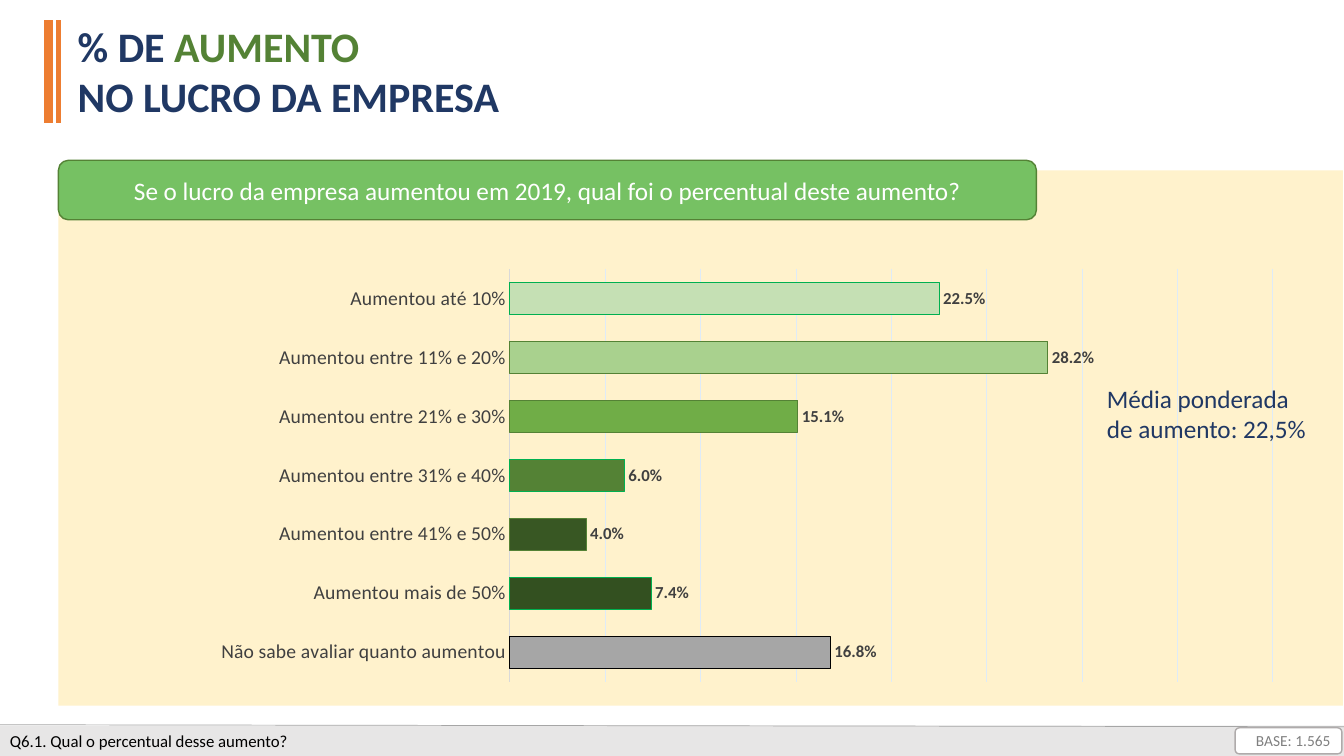
"""Builds the slide on the percentage increase in company profit."""
from dataclasses import dataclass

import lxml.etree as etree
import pptx
import pptx.chart.data
import pptx.dml.color
import pptx.enum.chart
import pptx.enum.shapes
import pptx.enum.text
import pptx.oxml.ns
import pptx.util

Inches = pptx.util.Inches
Pt = pptx.util.Pt
qn = pptx.oxml.ns.qn
SHAPE = pptx.enum.shapes.MSO_SHAPE
ALIGN = pptx.enum.text.PP_ALIGN
ANCHOR = pptx.enum.text.MSO_ANCHOR


@dataclass(frozen=True)
class Theme:
    font: str = "Calibri"
    navy: str = "203864"
    green: str = "548235"
    banner: str = "76C163"
    orange: str = "ED7D31"
    panel: str = "FFF2CC"
    footer: str = "E7E6E6"
    footer_rule: str = "A6A6A6"
    base_border: str = "AFABAB"
    base_text: str = "808080"
    chart_text: str = "404040"
    axis: str = "D9D9D9"
    grid: str = "DEEBF7"
    bar: str = "BDD7EE"
    bright: str = "00B050"
    white: str = "FFFFFF"
    black: str = "000000"
    title_size: int = 30
    body_size: int = 18
    category_size: int = 14
    small_size: int = 12
    base_size: int = 11
    chart_size: int = 10


T = Theme()

ANSWERS = [
    ("Aumentou até 10%", 0.225, "C5E0B4", T.bright),
    ("Aumentou entre 11% e 20%", 0.282, "A9D18E", T.green),
    ("Aumentou entre 21% e 30%", 0.151, "70AD47", T.green),
    ("Aumentou entre 31% e 40%", 0.06, "548235", T.bright),
    ("Aumentou entre 41% e 50%", 0.04, "385723", T.green),
    ("Aumentou mais de 50%", 0.074, "335020", T.bright),
    ("Não sabe avaliar quanto aumentou", 0.168, "A6A6A6", T.black),
]


def rgb(color):
    """Return a colour object for a hex string."""
    return pptx.dml.color.RGBColor.from_string(color)


def set_font(font, size, color, bold=False):
    """Apply the theme typeface with a size, colour and weight."""
    font.name = T.font
    font.size = Pt(size)
    font.bold = bold
    font.color.rgb = rgb(color)


def set_line(line, color, width):
    """Give an outline its colour and width in points."""
    line.color.rgb = rgb(color)
    line.width = Pt(width)


def place(sp, box):
    """Move and size a shape to a box in inches."""
    sp.left, sp.top, sp.width, sp.height = map(Inches, box)


def write(sp, text, size, color, align=ALIGN.LEFT):
    """Fill a shape with wrapped text in one style."""
    tf = sp.text_frame
    tf.word_wrap = True
    tf.text = text
    for p in tf.paragraphs:
        p.alignment = align
        for r in p.runs:
            set_font(r.font, size, color)


def add_box(s, kind, box, fill, border=None):
    """Add a filled shape with an optional border."""
    sp = s.shapes.add_shape(kind, *map(Inches, box))
    sp.shadow.inherit = False
    sp.fill.solid()
    sp.fill.fore_color.rgb = rgb(fill)
    if border:
        set_line(sp.line, border, 1)
    else:
        sp.line.fill.background()
    return sp


def add_rule(s, start, end, color, width):
    """Add a straight line without a shadow."""
    line = s.shapes.add_connector(
        pptx.enum.shapes.MSO_CONNECTOR.STRAIGHT, *map(Inches, start + end))
    set_line(line.line, color, width)
    etree.SubElement(line.element.spPr, qn("a:effectLst"))


def add_title(s, box, lines):
    """Write lines of coloured runs in the title placeholder."""
    title = s.shapes.title
    place(title, box)
    tf = title.text_frame
    tf.word_wrap = True
    tf.auto_size = pptx.enum.text.MSO_AUTO_SIZE.NONE
    tf.vertical_anchor = ANCHOR.TOP
    for i, runs in enumerate(lines):
        p = tf.add_paragraph() if i else tf.paragraphs[0]
        p.alignment = ALIGN.LEFT
        p.line_spacing = 1.0
        p.space_before = Pt(0)
        for text, color in runs:
            r = p.add_run()
            r.text = text
            set_font(r.font, T.title_size, color, bold=True)


def set_plot_area(chart, x, y, w, h):
    """Fix the inner plot area as fractions of the chart."""
    area = chart.element.find(".//" + qn("c:plotArea"))
    for old in area.findall(qn("c:layout")):
        area.remove(old)
    layout = etree.Element(qn("c:layout"))
    manual = etree.SubElement(layout, qn("c:manualLayout"))
    settings = [("layoutTarget", "inner"), ("xMode", "edge"), ("yMode", "edge"),
                ("x", x), ("y", y), ("w", w), ("h", h)]
    for tag, val in settings:
        etree.SubElement(manual, qn("c:" + tag)).set("val", str(val))
    area.insert(0, layout)


def style_axes(chart):
    """Show categories from the top and leave only the value gridlines."""
    cat = chart.category_axis
    cat.reverse_order = True
    cat.major_tick_mark = pptx.enum.chart.XL_TICK_MARK.NONE
    set_font(cat.tick_labels.font, T.category_size, T.chart_text)
    set_line(cat.format.line, T.axis, 0.75)
    val = chart.value_axis
    val.visible = False
    val.minimum_scale, val.maximum_scale, val.major_unit = 0, 0.4, 0.05
    val.has_major_gridlines = True
    set_line(val.major_gridlines.format.line, T.grid, 0.75)


def add_bars(s, box, answers):
    """Add the bar chart with one colour per answer."""
    data = pptx.chart.data.CategoryChartData(number_format="0.0%")
    data.categories = [answer[0] for answer in answers]
    data.add_series("Series 1", [answer[1] for answer in answers])
    chart = s.shapes.add_chart(pptx.enum.chart.XL_CHART_TYPE.BAR_CLUSTERED,
                               *map(Inches, box), data).chart
    chart.has_legend = False
    chart.has_title = False
    set_font(chart.font, T.chart_size, T.black)
    set_plot_area(chart, 0.353, 0.05, 0.647, 0.9)
    style_axes(chart)
    plot = chart.plots[0]
    plot.gap_width = 84
    plot.vary_by_categories = False
    series = plot.series[0]
    series.format.fill.solid()
    series.format.fill.fore_color.rgb = rgb(T.bar)
    for i, (_, _, fill, border) in enumerate(answers):
        fmt = series.points[i].format
        fmt.fill.solid()
        fmt.fill.fore_color.rgb = rgb(fill)
        set_line(fmt.line, border, 0.75)
    labels = series.data_labels
    labels.show_value = True
    labels.number_format = "0.0%"
    labels.number_format_is_linked = False
    labels.position = pptx.enum.chart.XL_LABEL_POSITION.OUTSIDE_END
    set_font(labels.font, T.small_size, T.chart_text, bold=True)


def main():
    """Build and save the slide."""
    prs = pptx.Presentation()
    prs.slide_width, prs.slide_height = Inches(13.33), Inches(7.5)
    s = prs.slides.add_slide(prs.slide_layouts[5])
    add_title(s, (0.67, 0.15, 8.53, 1.11), [
        [("% DE ", T.navy), ("AUMENTO", T.green)],
        [("NO LUCRO DA EMPRESA", T.navy)]])
    for x, width in ((0.48, 6), (0.58, 3)):
        add_rule(s, (x, 0.2), (x, 1.22), T.orange, width)
    add_box(s, SHAPE.RECTANGLE, (0.58, 1.69, 12.74, 5.31), T.panel)
    banner = add_box(s, SHAPE.ROUNDED_RECTANGLE, (0.58, 1.59, 9.7, 0.59), T.banner, T.green)
    write(banner, "Se o lucro da empresa aumentou em 2019, qual foi o percentual deste aumento?",
          T.body_size, T.white, ALIGN.CENTER)
    add_bars(s, (0.93, 2.44, 11.7, 4.55), ANSWERS)
    average = s.shapes.add_textbox(*map(Inches, (10.88, 3.75, 2.31, 0.71)))
    write(average, "Média ponderada de aumento: 22,5%", T.body_size, T.navy)
    footer = add_box(s, SHAPE.RECTANGLE, (0, 7.2, 13.33, 0.3), T.footer)
    write(footer, "Q6.1. Qual o percentual desse aumento?", T.small_size, T.black)
    add_rule(s, (0, 7.19), (13.33, 7.21), T.footer_rule, 0.5)
    base = add_box(s, SHAPE.ROUNDED_RECTANGLE, (12.25, 7.22, 1.06, 0.26), T.white, T.base_border)
    write(base, "BASE: 1.565", T.base_size, T.base_text, ALIGN.RIGHT)
    prs.save("out.pptx")


if __name__ == "__main__":
    main()
